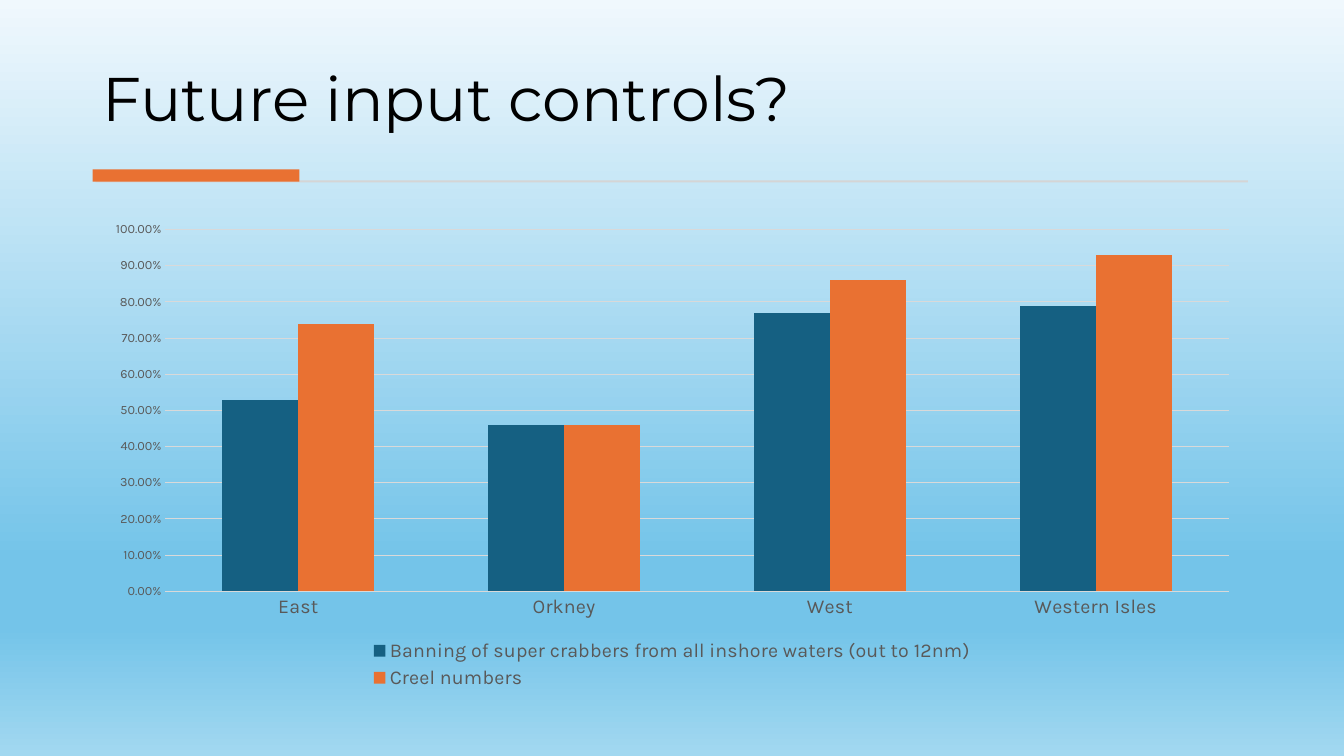
from lxml import etree
from pptx import Presentation
from pptx.chart.data import CategoryChartData
from pptx.dml.color import RGBColor
from pptx.enum.chart import XL_CHART_TYPE, XL_LEGEND_POSITION, XL_TICK_MARK
from pptx.enum.shapes import MSO_SHAPE
from pptx.enum.text import MSO_ANCHOR
from pptx.oxml.ns import qn
from pptx.util import Pt

COLUMNS = XL_CHART_TYPE.COLUMN_CLUSTERED
LEGEND_BOTTOM = XL_LEGEND_POSITION.BOTTOM
NO_TICKS = XL_TICK_MARK.NONE
RECTANGLE = MSO_SHAPE.RECTANGLE
ANCHOR_BOTTOM = MSO_ANCHOR.BOTTOM

TITLE = "Future input controls?"
TITLE_FONT, BODY_FONT = "Montserrat", "Karla"
TEXT_GREY = "595959"
REGIONS = ["East", "Orkney", "West", "Western Isles"]
SERIES = [
    ("Banning of super crabbers from all inshore waters (out to 12nm)",
     "156082", [0.53, 0.46, 0.77, 0.79]),
    ("Creel numbers", "E97132", [0.74, 0.46, 0.86, 0.93]),
]
BACKGROUND_STOPS = [(0, "F0F8FD"), (74, "74C4E9"), (83, "74C4E9"), (100, "A2D8F0")]

# left, top, width, height in points
TITLE_BOX = (66.24, 20.16, 827.28, 79.92)
RULES = [
    ("D5D5D5", (68.4, 128.88, 822.96, 1.44)),
    ("E97132", (66.24, 120.96, 147.6, 8.9)),
]
CHART_BOX = (66.24, 151.92, 828, 343.44)


def points(box):
    return [Pt(length) for length in box]


def color(hex_color):
    return RGBColor.from_string(hex_color)


def style_font(font, name, size, hex_color):
    font.name = name
    font.size = Pt(size)
    font.color.rgb = color(hex_color)


def paint_background(slide):
    fill = slide.background.fill
    fill.gradient()
    fill.gradient_angle = 270
    stop_list = slide.element.find(".//" + qn("a:gsLst"))
    for stop in list(stop_list):
        stop_list.remove(stop)
    for percent, hex_color in BACKGROUND_STOPS:
        stop = etree.SubElement(stop_list, qn("a:gs"), pos=str(percent * 1000))
        etree.SubElement(stop, qn("a:srgbClr"), val=hex_color)


def add_title(slide):
    frame = slide.shapes.add_textbox(*points(TITLE_BOX)).text_frame
    frame.word_wrap = True
    frame.vertical_anchor = ANCHOR_BOTTOM
    paragraph = frame.paragraphs[0]
    paragraph.text = TITLE
    paragraph.line_spacing = 0.9
    style_font(paragraph.font, TITLE_FONT, 44, "000000")


def add_rule(slide, hex_color, box):
    shape = slide.shapes.add_shape(RECTANGLE, *points(box))
    shape.shadow.inherit = False
    shape.fill.solid()
    shape.fill.fore_color.rgb = color(hex_color)
    shape.line.fill.background()


def style_axis(axis, size):
    axis.major_tick_mark = axis.minor_tick_mark = NO_TICKS
    axis.format.line.fill.background()
    style_font(axis.tick_labels.font, BODY_FONT, size, TEXT_GREY)


def add_chart(slide):
    data = CategoryChartData(number_format="0.00%")
    data.categories = REGIONS
    for name, _, values in SERIES:
        data.add_series(name, values)
    chart = slide.shapes.add_chart(COLUMNS, *points(CHART_BOX), data).chart
    style_font(chart.font, BODY_FONT, 10, "000000")
    chart.has_title = False

    chart.has_legend = True
    chart.legend.position = LEGEND_BOTTOM
    chart.legend.include_in_layout = False
    style_font(chart.legend.font, BODY_FONT, 14, TEXT_GREY)

    style_axis(chart.category_axis, 14)
    value_axis = chart.value_axis
    style_axis(value_axis, 9)
    value_axis.minimum_scale, value_axis.maximum_scale = 0, 1
    value_axis.major_unit = 0.1
    value_axis.tick_labels.number_format = "0.00%"
    value_axis.tick_labels.number_format_is_linked = False
    grid_line = value_axis.major_gridlines.format.line
    grid_line.color.rgb = color("D9D9D9")
    grid_line.width = Pt(0.75)

    plot = chart.plots[0]
    plot.gap_width, plot.overlap = 150, 0
    plot.vary_by_categories = False
    for series, (_, hex_color, _) in zip(plot.series, SERIES):
        series.format.fill.solid()
        series.format.fill.fore_color.rgb = color(hex_color)


def main():
    presentation = Presentation()
    presentation.slide_width, presentation.slide_height = Pt(960), Pt(540)
    slide = presentation.slides.add_slide(presentation.slide_layouts[6])
    paint_background(slide)
    add_title(slide)
    for hex_color, box in RULES:
        add_rule(slide, hex_color, box)
    add_chart(slide)
    presentation.save("out.pptx")


if __name__ == "__main__":
    main()
